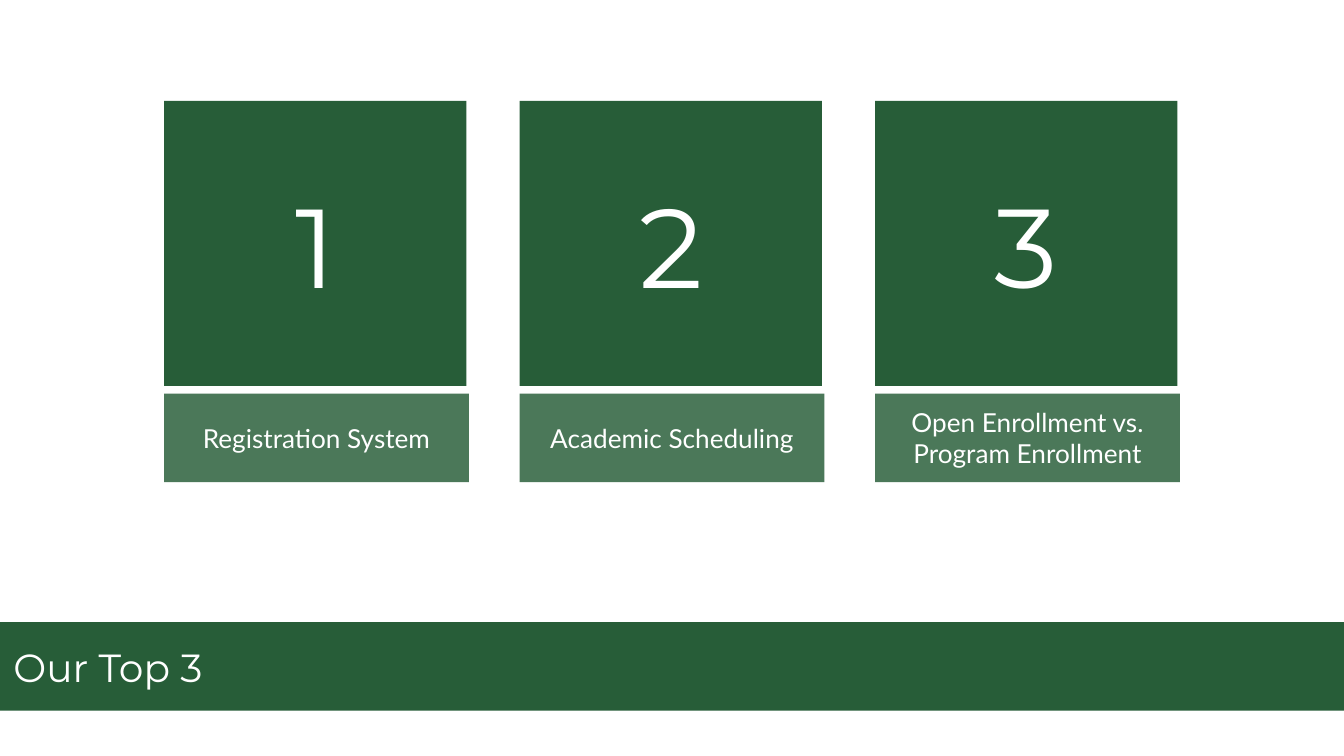
"""Build a slide with three numbered priority cards above a title banner."""
from dataclasses import dataclass

from lxml.etree import SubElement
from pptx import Presentation
from pptx.dml.color import RGBColor as RGB
from pptx.enum.shapes import MSO_SHAPE as SHAPE
from pptx.enum.text import MSO_ANCHOR as ANCHOR, MSO_AUTO_SIZE as AUTO, PP_ALIGN as ALIGN
from pptx.oxml.ns import qn
from pptx.shapes.autoshape import Shape
from pptx.shapes.shapetree import SlideShapes
from pptx.util import Pt

COLORS = {"green": "275D38", "white": "FFFFFF"}
FRAME = {
    "word_wrap": True,
    "auto_size": AUTO.NONE,
    "vertical_anchor": ANCHOR.MIDDLE,
    "margin_left": Pt(7.2),
    "margin_right": Pt(7.2),
    "margin_top": Pt(7.2),
    "margin_bottom": Pt(7.2),
}
FONTS = {
    "banner": {"name": "Montserrat", "size": Pt(21)},
    "number": {"name": "Montserrat", "size": Pt(60)},
    "label": {"name": "Lato", "size": Pt(14)},
}
CARD_LEFT, CARD_STEP = 87.9, 190.45


@dataclass
class Box:
    left: float
    top: float
    width: float
    height: float


@dataclass
class Card:
    number: str
    label: str


CARDS = [
    Card("1", "Registration System"),
    Card("2", "Academic Scheduling"),
    Card("3", "Open Enrollment vs. Program Enrollment"),
]


def set_all(obj: object, values: dict) -> None:
    for name, value in values.items():
        setattr(obj, name, value)


def format_box(sp: Shape, text: str, font: str, align: ALIGN, opacity: int = 100) -> None:
    sp.fill.solid()
    sp.fill.fore_color.rgb = RGB.from_string(COLORS["green"])
    if opacity < 100:
        color = sp.fill._xPr.find(qn("a:solidFill"))[0]
        SubElement(color, qn("a:alpha"), val=str(opacity * 1000))
    sp.line.fill.background()
    tf = sp.text_frame
    set_all(tf, FRAME)
    p = tf.paragraphs[0]
    p.alignment = align
    r = p.add_run()
    r.text = text
    set_all(r.font, FONTS[font])
    r.font.color.rgb = RGB.from_string(COLORS["white"])


def draw_card(shapes: SlideShapes, card: Card, left: float) -> None:
    group = shapes.add_group_shape()
    parts = [
        (Box(left, 54, 162, 152.75), card.number, "number", 100),
        (Box(left, 210.9, 163.4, 47.4), card.label, "label", 83),
    ]
    for box, text, font, opacity in parts:
        sp = group.shapes.add_shape(
            SHAPE.RECTANGLE, Pt(box.left), Pt(box.top), Pt(box.width), Pt(box.height)
        )
        sp.shadow.inherit = False
        format_box(sp, text, font, ALIGN.CENTER, opacity)


def main() -> None:
    prs = Presentation()
    prs.slide_width, prs.slide_height = Pt(720), Pt(405)
    s = prs.slides.add_slide(prs.slide_layouts[5])
    title = s.shapes.title
    set_all(title, {"left": Pt(0), "top": Pt(333.3), "width": Pt(720), "height": Pt(47.4)})
    format_box(title, "Our Top 3", "banner", ALIGN.LEFT)
    for i, card in enumerate(CARDS):
        draw_card(s.shapes, card, CARD_LEFT + i * CARD_STEP)
    prs.save("out.pptx")


if __name__ == "__main__":
    main()
